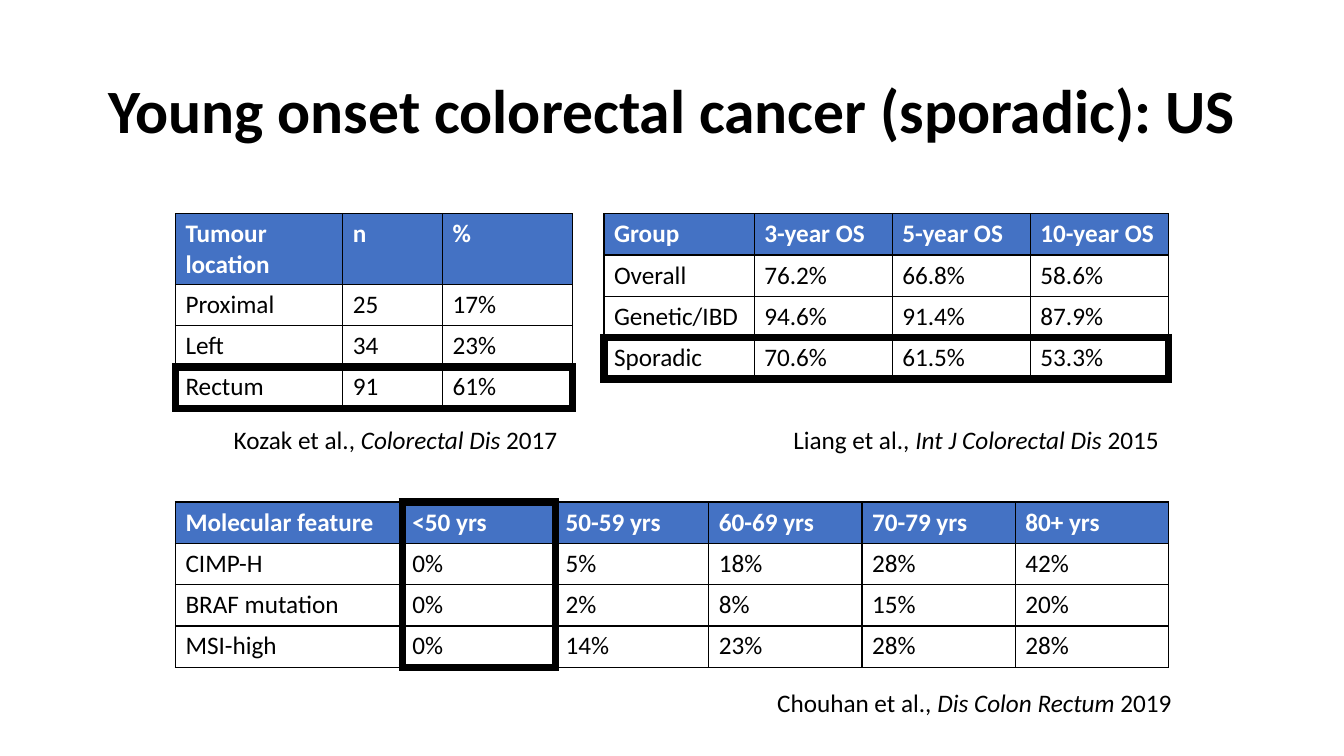
from lxml.etree import SubElement
from pptx import Presentation
from pptx.dml.color import RGBColor
from pptx.enum.text import MSO_ANCHOR, PP_ALIGN
from pptx.oxml.ns import qn
from pptx.util import Inches, Pt

BLACK, WHITE, BLUE = "000000", "FFFFFF", "4472C4"
SIDES = {"L": (0, -1), "R": (0, 1), "T": (-1, 0), "B": (1, 0)}


def color(value):
    return RGBColor.from_string(value)


class Deck:
    """Holds the text style and the current slide, and adds elements to it."""

    font = {"name": "Calibri", "size": Pt(18), "bold": False, "italic": False}

    def __init__(self, prs):
        self.s = prs.slides.add_slide(prs.slide_layouts[6])

    def run(self, p, text, fill=BLACK, **style):
        r = p.add_run()
        r.text = text
        for key, value in {**self.font, **style}.items():
            setattr(r.font, key, value)
        r.font.color.rgb = color(fill)

    def box(self, *at):
        tf = self.s.shapes.add_textbox(*map(Inches, at)).text_frame
        tf.word_wrap = True
        return tf

    def title(self, text, *at):
        tf = self.box(*at)
        tf.vertical_anchor = MSO_ANCHOR.MIDDLE
        p = tf.paragraphs[0]
        for key, value in {"alignment": PP_ALIGN.CENTER, "line_spacing": 0.9}.items():
            setattr(p, key, value)
        self.run(p, text, size=Pt(44), bold=True)

    def citation(self, authors, journal, year, *at):
        p = self.box(*at).paragraphs[0]
        self.run(p, authors + " ")
        self.run(p, journal + " ", italic=True)
        self.run(p, year)

    def border(self, cell, side, width):
        tcPr = cell._tc.get_or_add_tcPr()
        ln = SubElement(tcPr, qn(f"a:ln{side}"), w=str(Pt(width)))
        SubElement(SubElement(ln, qn("a:solidFill")), qn("a:srgbClr"), val=BLACK)

    def table(self, left, top, widths, rows, boxed):
        shape = self.s.shapes.add_table(
            len(rows), len(widths), Inches(left), Inches(top),
            Inches(sum(widths)), Inches(0.41 * len(rows)))
        table = shape.table
        for column, width in zip(table.columns, widths):
            column.width = Inches(width)
        for i, row in enumerate(rows):
            table.rows[i].height = Inches(0.41)
            for j, text in enumerate(row):
                cell = table.cell(i, j)
                for side, (di, dj) in SIDES.items():
                    edge = ((i, j) in boxed) != ((i + di, j + dj) in boxed)
                    self.border(cell, side, 6 if edge else 1)
                p = cell.text_frame.paragraphs[0]
                if i == 0:
                    cell.fill.solid()
                    cell.fill.fore_color.rgb = color(BLUE)
                    self.run(p, text, WHITE, bold=True)
                else:
                    cell.fill.background()
                    self.run(p, text)


def main():
    prs = Presentation()
    prs.slide_width, prs.slide_height = Inches(13.33), Inches(7.5)
    deck = Deck(prs)
    deck.title("Young onset colorectal cancer (sporadic): US", 0.92, 0.4, 11.5, 1.45)

    locations = [
        ("Tumour location", "n", "%"),
        ("Proximal", "25", "17%"),
        ("Left", "34", "23%"),
        ("Rectum", "91", "61%"),
    ]
    survival = [
        ("Group", "3-year OS", "5-year OS", "10-year OS"),
        ("Overall", "76.2%", "66.8%", "58.6%"),
        ("Genetic/IBD", "94.6%", "91.4%", "87.9%"),
        ("Sporadic", "70.6%", "61.5%", "53.3%"),
    ]
    features = [
        ("Molecular feature", "<50 yrs", "50-59 yrs", "60-69 yrs", "70-79 yrs", "80+ yrs"),
        ("CIMP-H", "0%", "5%", "18%", "28%", "42%"),
        ("BRAF mutation", "0%", "2%", "8%", "15%", "20%"),
        ("MSI-high", "0%", "14%", "23%", "28%", "28%"),
    ]
    deck.table(1.74, 2.12, [1.66, 0.99, 1.29], locations, {(3, j) for j in range(3)})
    deck.table(5.99, 2.12, [1.49] + [1.37] * 3, survival, {(3, j) for j in range(4)})
    deck.table(1.74, 4.98, [2.25] + [1.52] * 5, features, {(i, 1) for i in range(4)})

    deck.citation("Chouhan et al.,", "Dis Colon Rectum", "2019", 7.61, 6.77, 4.26, 0.4)
    deck.citation("Kozak et al.,", "Colorectal Dis", "2017", 2.22, 4.16, 3.47, 0.4)
    deck.citation("Liang et al.,", "Int J Colorectal Dis", "2015", 7.77, 4.16, 3.87, 0.4)
    prs.save("out.pptx")


if __name__ == "__main__":
    main()
